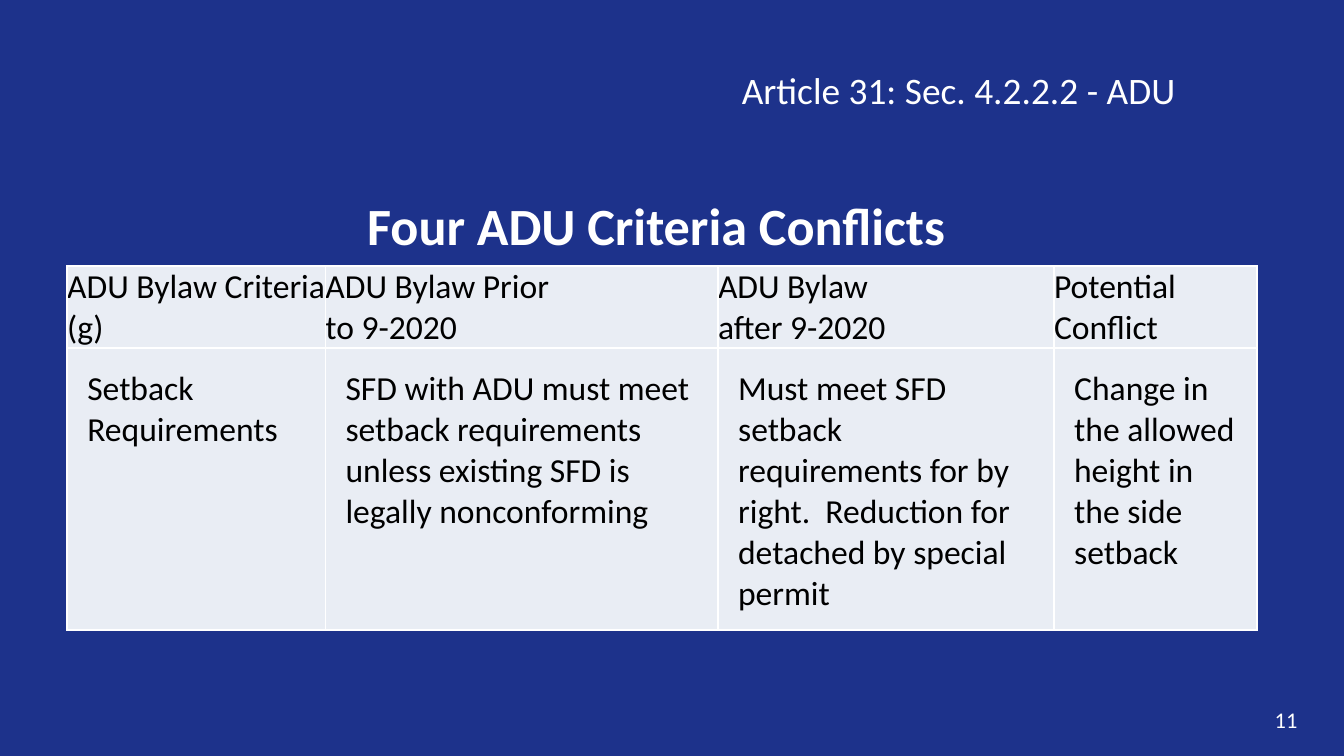
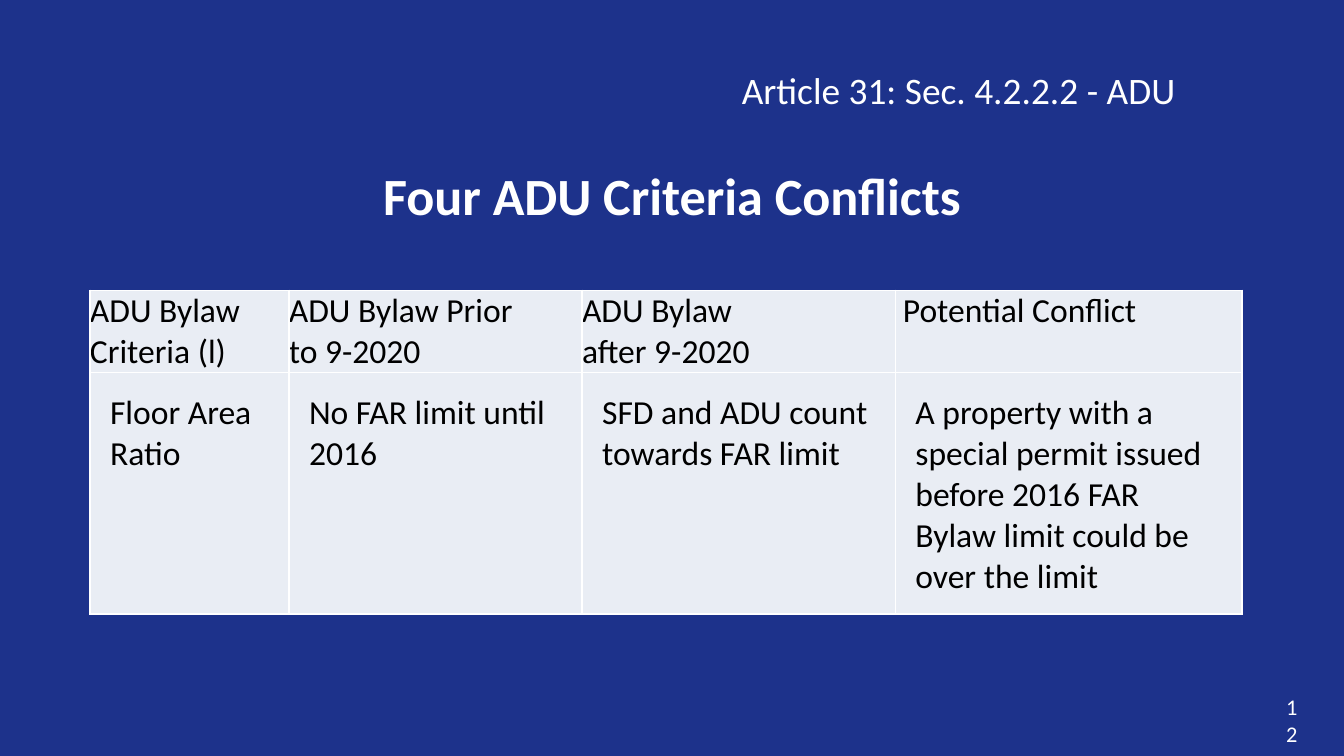
from lxml import etree
from pptx import Presentation
from pptx.dml.color import RGBColor
from pptx.enum.text import MSO_ANCHOR as ANCHOR, PP_ALIGN as ALIGN
from pptx.oxml.ns import qn
from pptx.util import Cm, Pt

NAVY = RGBColor(0x1D, 0x32, 0x8B)
WHITE = RGBColor(0xFF, 0xFF, 0xFF)
BLACK = RGBColor(0x00, 0x00, 0x00)
PALE = RGBColor(0xE9, 0xED, 0xF4)
FONT = "Calibri"
HEADER_H = 1.55
CELL_PAD = 0.38

# What differs between the slides (lengths in cm)
SLIDES = [
    dict(
        number="11", number_w=0.95, title_at=(0.97, 3.05),
        table_at=(1.27, 5.03), cols=(4.88, 7.42, 6.35, 3.84), body_h=5.31,
        rows=[
            ["ADU Bylaw Criteria (g)", "ADU Bylaw Prior\nto 9-2020",
             "ADU Bylaw\nafter 9-2020", "Potential Conflict"],
            ["Setback Requirements",
             "SFD with ADU must meet setback requirements unless existing "
             "SFD is legally nonconforming",
             "Must meet SFD setback requirements for by right.  Reduction "
             "for detached by special permit",
             "Change in the allowed height in the side setback"],
        ],
    ),
    dict(
        number="12", number_w=0.84, title_at=(1.27, 2.49),
        table_at=(1.7, 5.49), cols=(3.76, 5.54, 5.92, 6.55), body_h=4.55,
        rows=[
            ["ADU Bylaw Criteria (l)", "ADU Bylaw Prior\nto 9-2020",
             "ADU Bylaw\nafter 9-2020", " Potential Conflict"],
            ["Floor Area Ratio", "No FAR limit until 2016",
             "SFD and ADU count towards FAR limit",
             "A property with a special permit issued before 2016 FAR Bylaw "
             "limit could be over the limit"],
        ],
    ),
]


def write(tf, text, size, color, align=ALIGN.LEFT, bold=False):
    tf.word_wrap = True
    tf.text = text
    for p in tf.paragraphs:
        p.alignment = align
        p.font.name, p.font.size, p.font.bold = FONT, Pt(size), bold
        p.font.color.rgb = color


def add_text(s, left, top, width, height, text, size, anchor=ANCHOR.MIDDLE, **style):
    tf = s.shapes.add_textbox(Cm(left), Cm(top), Cm(width), Cm(height)).text_frame
    tf.vertical_anchor = anchor
    write(tf, text, size, WHITE, **style)


prs = Presentation()
prs.slide_width, prs.slide_height = Cm(25.4), Cm(14.29)

for data in SLIDES:
    s = prs.slides.add_slide(prs.slide_layouts[6])
    s.background.fill.solid()
    s.background.fill.fore_color.rgb = NAVY

    # Title and page number, which ends at a fixed right edge
    add_text(s, *data["title_at"], 22.86, 2.39, "Four ADU Criteria Conflicts", 28,
             align=ALIGN.CENTER, bold=True)
    add_text(s, 24.77 - data["number_w"], 13.23, data["number_w"], 0.76,
             data["number"], 12, align=ALIGN.RIGHT)

    # Criteria table
    heights = (HEADER_H, data["body_h"])
    left, top = data["table_at"]
    table = s.shapes.add_table(2, 4, Cm(left), Cm(top), Cm(sum(data["cols"])),
                               Cm(sum(heights))).table
    table.first_row = table.horz_banding = False
    for col, width in zip(table.columns, data["cols"]):
        col.width = Cm(width)
    for row, height, texts, pad in zip(table.rows, heights, data["rows"], (0, CELL_PAD)):
        row.height = Cm(height)
        for cell, text in zip(row.cells, texts):
            cell.margin_left = cell.margin_right = Cm(pad)
            cell.margin_top = cell.margin_bottom = Cm(pad)
            write(cell.text_frame, text, 18, BLACK)
            cell.fill.solid()
            cell.fill.fore_color.rgb = PALE
            # Borders stand before the fill in the cell properties
            tc_pr = cell._tc.get_or_add_tcPr()
            for i, side in enumerate(("a:lnL", "a:lnR", "a:lnT", "a:lnB")):
                ln = etree.Element(qn(side), w=str(Pt(1)))
                fill = etree.SubElement(ln, qn("a:solidFill"))
                etree.SubElement(fill, qn("a:srgbClr"), val=str(WHITE))
                tc_pr.insert(i, ln)

    # Article reference
    add_text(s, 13.77, 1.14, 10.36, 1.12, "Article 31: Sec. 4.2.2.2 - ADU", 20,
             anchor=ANCHOR.TOP)

prs.save("out.pptx")
